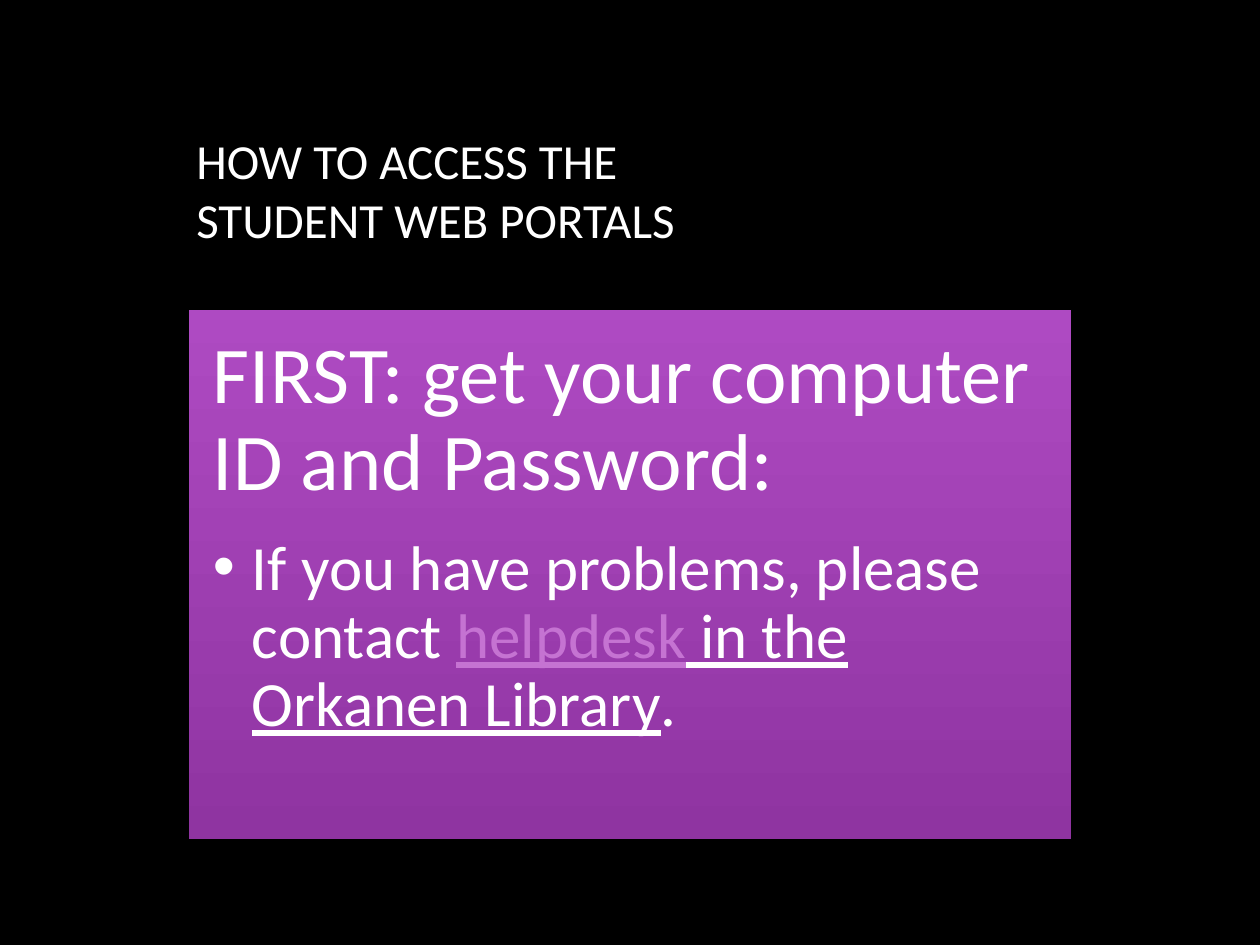
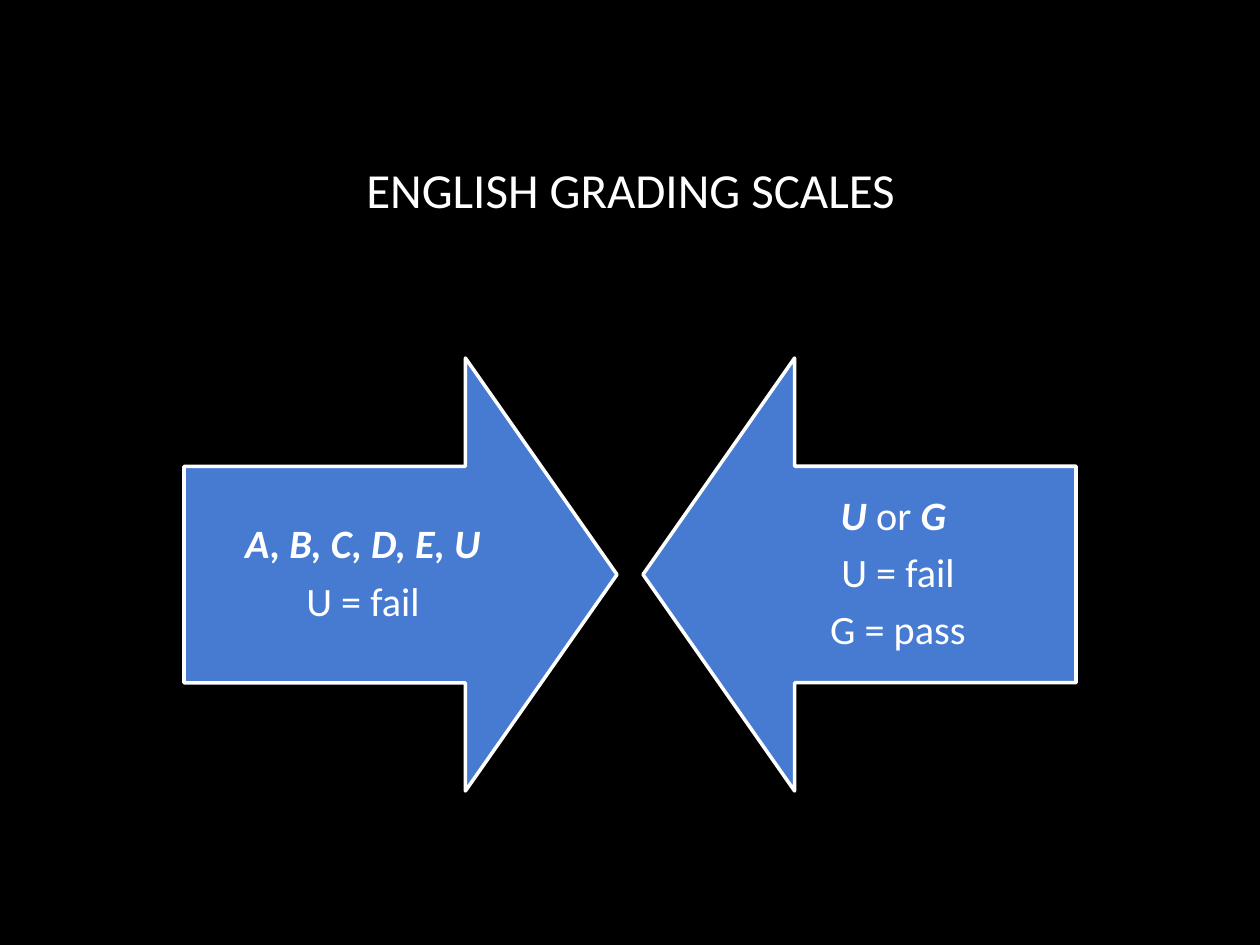
from pptx import Presentation
from pptx import util as u
from pptx.dml.color import RGBColor
from pptx.enum import shapes, text
from lxml import etree

PX = 914400 / 126
BLACK = RGBColor(0, 0, 0)
WHITE = RGBColor(0xFF, 0xFF, 0xFF)
PURPLE_TOP = RGBColor(0xAE, 0x4A, 0xC2)
PURPLE_BOTTOM = RGBColor(0x8F, 0x34, 0xA1)
LINK = RGBColor(0xC5, 0x73, 0xD2)
BLUE = RGBColor(0x47, 0x7B, 0xD1)
A = "{http://schemas.openxmlformats.org/drawingml/2006/main}"


def px(*lengths):
    return [u.Emu(round(n * PX)) for n in lengths]


def style(paragraph, size, align, after=None):
    paragraph.alignment = align
    if after is not None:
        paragraph.line_spacing = 0.9
        paragraph.space_after = u.Pt(after)
    font = paragraph.font
    font.name, font.size = "Calibri", u.Pt(size)
    font.color.rgb = WHITE


LEFT, CENTER = text.PP_ALIGN.LEFT, text.PP_ALIGN.CENTER
prs = Presentation()
prs.slide_width, prs.slide_height = px(1260, 945)
slides = []
for heading, align in [
    ("HOW TO ACCESS THE\vSTUDENT WEB PORTALS", LEFT),
    ("ENGLISH GRADING SCALES", CENTER),
]:
    slide = prs.slides.add_slide(prs.slide_layouts[6])
    slide.background.fill.solid()
    slide.background.fill.fore_color.rgb = BLACK
    title = slide.shapes.add_textbox(*px(184, 110, 893, 158)).text_frame
    title.word_wrap = True
    title.vertical_anchor = text.MSO_ANCHOR.MIDDLE
    title.paragraphs[0].text = heading
    style(title.paragraphs[0], 28, align)
    slides.append(slide)
portals, grading = slides

panel = portals.shapes.add_shape(
    shapes.MSO_SHAPE.RECTANGLE, *px(189, 310, 882, 529))
panel.shadow.inherit = False
panel.line.fill.background()
panel.fill.gradient()
panel.fill.gradient_angle = 270
for stop, color in zip(panel.fill.gradient_stops, (PURPLE_TOP, PURPLE_BOTTOM)):
    stop.color.rgb = color
steps = panel.text_frame
steps.word_wrap = True
steps.vertical_anchor = text.MSO_ANCHOR.TOP
steps.margin_left, steps.margin_top, steps.margin_right, steps.margin_bottom = px(24, 24, 24, 24)

first = steps.paragraphs[0]
first.text = "FIRST: get your computer ID and Password:"
style(first, 46, LEFT, 16)

contact = steps.add_paragraph()
contact.level = 1
indent = px(39)[0]
props = contact._p.get_or_add_pPr()
props.set("marL", str(indent))
props.set("indent", str(-indent))
etree.SubElement(props, A + "buFont").set("typeface", "Arial")
etree.SubElement(props, A + "buChar").set("char", "•")
style(contact, 36, LEFT, 5)
for words, color, underlined in [
    ("If you have problems, please contact ", WHITE, False),
    ("helpdesk", LINK, True),
    (" in the Orkanen Library", WHITE, True),
    (".", WHITE, False),
]:
    run = contact.add_run()
    run.text = words
    run.font.color.rgb = color
    run.font.underline = underlined

scales = [
    (184, 270, 184, [[("A, B, C, D, E, U", True)], [("U = fail", False)]]),
    (643, 90, 719, [[("U ", True), ("or", False), (" G ", True)],
                    [("U = fail", False)], [("G = pass", False)]]),
]
for arrow_left, rotation, label_left, lines in scales:
    arrow = grading.shapes.add_shape(
        shapes.MSO_SHAPE.DOWN_ARROW, *px(arrow_left, 358, 433, 433))
    arrow.rotation = rotation
    arrow.adjustments[0], arrow.adjustments[1] = 0.5, 0.35
    arrow.shadow.inherit = False
    arrow.fill.solid()
    arrow.fill.fore_color.rgb = BLUE
    arrow.line.color.rgb = WHITE
    arrow.line.width = u.Pt(2)

    label = grading.shapes.add_textbox(*px(label_left, 466, 358, 217)).text_frame
    label.word_wrap = True
    label.vertical_anchor = text.MSO_ANCHOR.MIDDLE
    label.margin_left, label.margin_top, label.margin_right, label.margin_bottom = px(23, 23, 23, 23)
    for i, line in enumerate(lines):
        grade = label.add_paragraph() if i else label.paragraphs[0]
        style(grade, 23, CENTER, 8)
        for words, strong in line:
            run = grade.add_run()
            run.text = words
            run.font.bold = run.font.italic = strong

prs.save("out.pptx")
